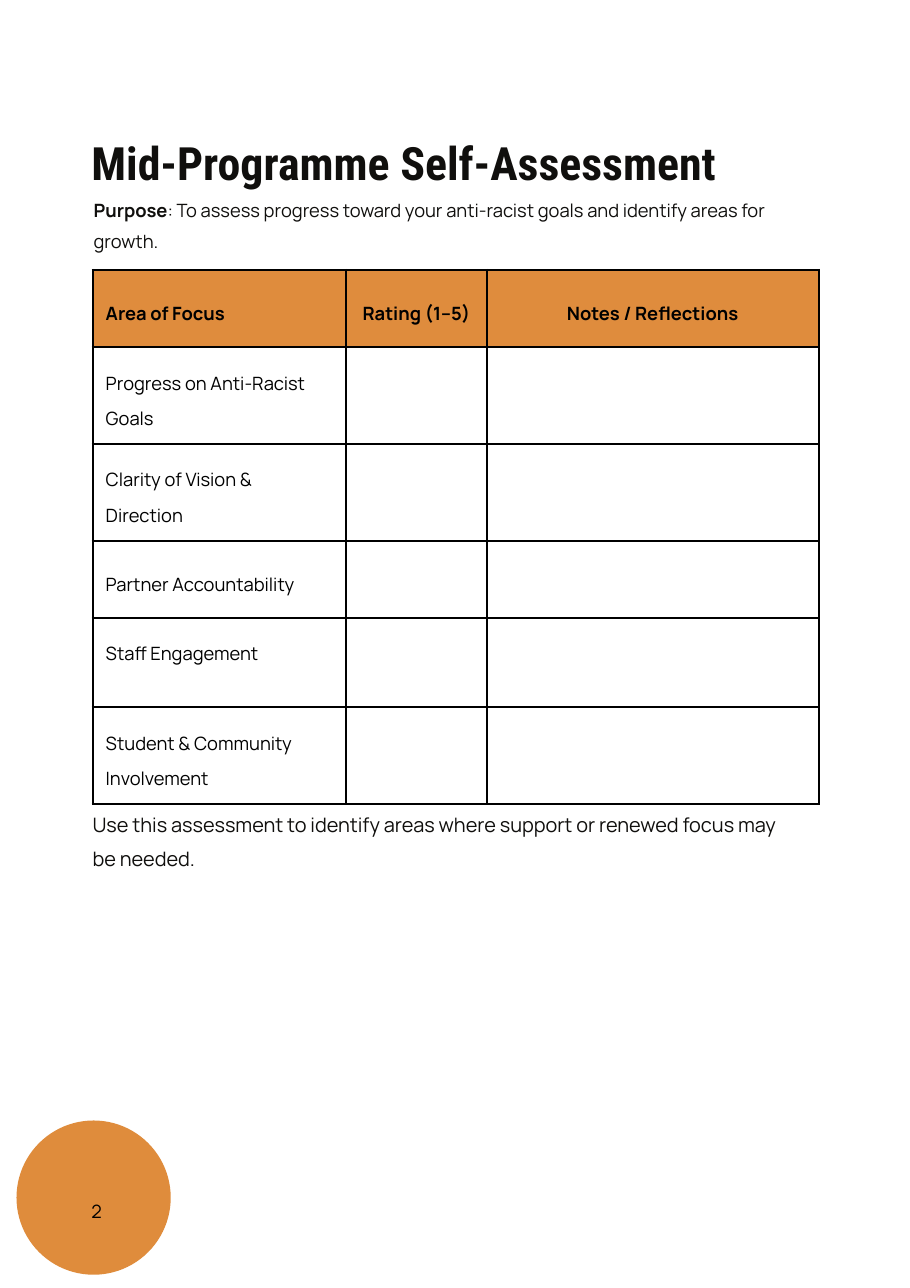
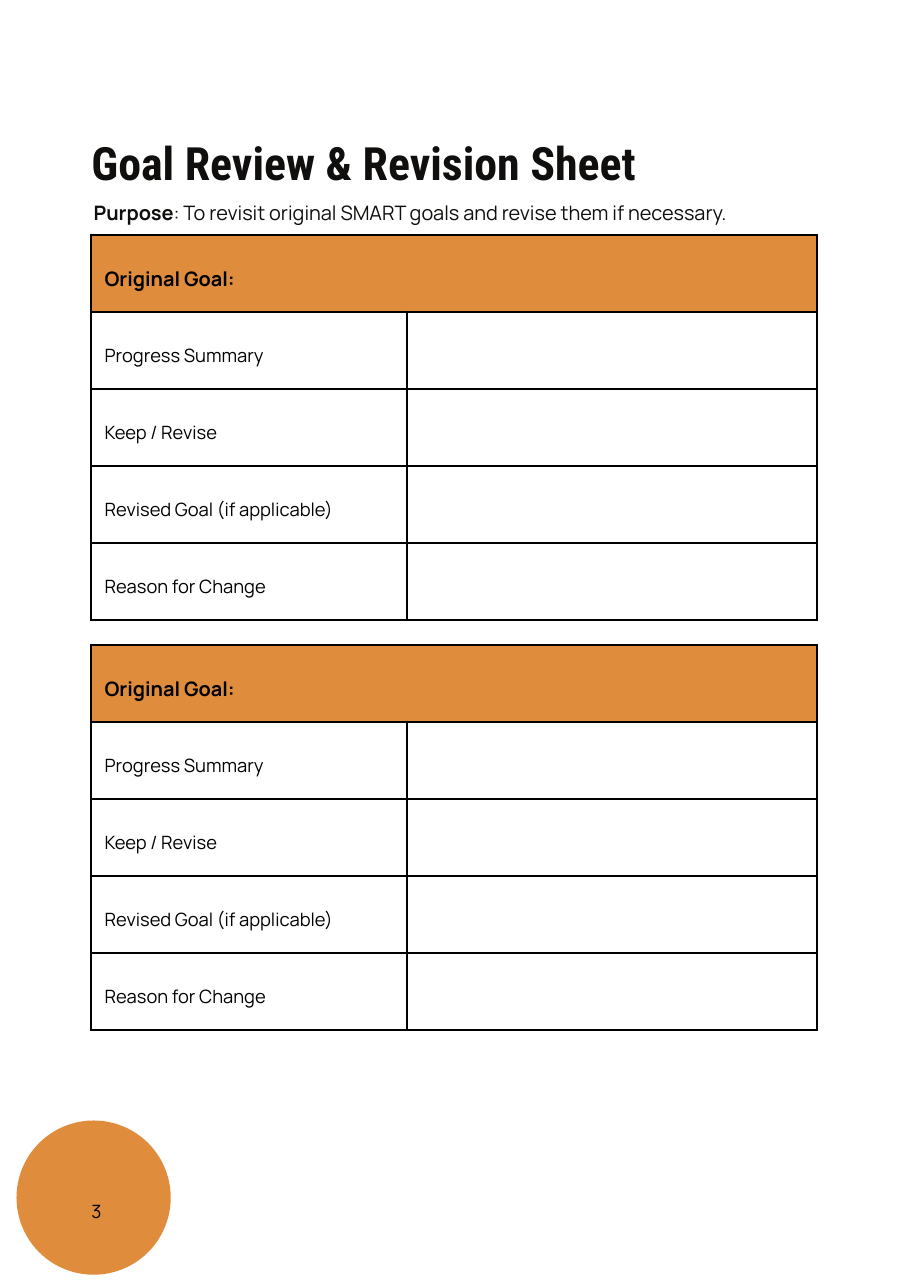
from lxml.etree import SubElement as Sub
from pptx import Presentation
from pptx.dml.color import RGBColor as Rgb
from pptx.enum.shapes import MSO_SHAPE as Shape
from pptx.enum.text import MSO_ANCHOR as Anchor, MSO_AUTO_SIZE as Auto, PP_ALIGN as Align
from pptx.oxml.ns import qn
from pptx.util import Inches, Pt

HUES = {"ink": "100F0D", "black": "000000", "head": "DF8C3D", "disc": "DF8C3C"}
BODY, HEAD = "Manrope", "Roboto Condensed"
LEFT, WIDE = 0.83, 6.42
SIDES = ("a:lnL", "a:lnR", "a:lnT", "a:lnB")
GOAL = ["Progress Summary", "Keep / Revise", "Revised Goal (if applicable)", "Reason for Change"]


def hue(name):
    return Rgb.from_string(HUES[name])


def style(run, size, bold=False, tone="ink", face=BODY):
    font = run.font
    font.name, font.size, font.bold = face, Pt(size), bold
    font.color.rgb = hue(tone)


def bare(frame):
    frame.word_wrap = True
    frame.auto_size = Auto.NONE
    frame.vertical_anchor = Anchor.TOP
    frame.margin_left = frame.margin_right = frame.margin_top = frame.margin_bottom = 0


def note(slide, box, parts, size, tone="ink"):
    frame = slide.shapes.add_textbox(*map(Inches, box)).text_frame
    bare(frame)
    para = frame.paragraphs[0]
    para.line_spacing = 1.4
    for text, bold in parts:
        run = para.add_run()
        run.text = text
        style(run, size, bold, tone)


def border(cell):
    props = cell._tc.get_or_add_tcPr()
    for side in SIDES:
        line = Sub(props, qn(side), w=str(Pt(1.5)))
        fill = Sub(line, qn("a:solidFill"))
        Sub(fill, qn("a:srgbClr"), val=HUES["black"])


def label(cell, text, size, bold, align):
    cell.text_frame.text = text
    para = cell.text_frame.paragraphs[0]
    para.line_spacing = 1.4
    para.alignment = align
    for run in para.runs:
        style(run, size, bold, "black")


def grid(slide, left, top, cols, rows, heads, names, size):
    box = (left, top, sum(cols), sum(rows))
    table = slide.shapes.add_table(len(rows), len(cols), *map(Inches, box)).table
    table.first_row = table.horz_banding = False
    for col, wide in zip(table.columns, cols):
        col.width = Inches(wide)
    for row, tall in zip(table.rows, rows):
        row.height = Inches(tall)
    for r, row in enumerate(table.rows):
        for cell in row.cells:
            cell.margin_left = cell.margin_right = Inches(0.12)
            cell.margin_top = cell.margin_bottom = Inches(0.12)
            cell.vertical_anchor = Anchor.MIDDLE
            border(cell)
            if r:
                cell.fill.background()
            else:
                cell.fill.solid()
                cell.fill.fore_color.rgb = hue("head")
    for c, text in enumerate(heads):
        label(table.cell(0, c), text, size, True, Align.CENTER if c else Align.LEFT)
    for r, text in enumerate(names, 1):
        label(table.cell(r, 0), text, 12, False, Align.LEFT)
    return table


def badge(slide, left, top, number):
    disc = slide.shapes.add_shape(Shape.OVAL, *map(Inches, (left, top, 1.4, 1.4)))
    disc.shadow.inherit = False
    disc.fill.solid()
    disc.fill.fore_color.rgb = hue("disc")
    disc.line.fill.background()
    note(slide, (left + 0.68, top + 0.64, 1.4, 0.25), [(number, False)], 12, "black")


def page(deck, title, aim, size, number):
    slide = deck.slides.add_slide(deck.slide_layouts[5])
    head = slide.shapes.title
    head.left, head.top, head.width, head.height = map(Inches, (LEFT, 1.22, WIDE, 0.45))
    bare(head.text_frame)
    head.text_frame.text = title
    para = head.text_frame.paragraphs[0]
    para.alignment = Align.LEFT
    style(para.runs[0], 30, True, face=HEAD)
    note(slide, (0.85, 1.73, WIDE, 0.48), [("Purpose", True), (": " + aim, False)], size)
    badge(slide, 0.15, 10.17, number)
    return slide


def assess(deck):
    slide = page(deck, "Mid-Programme Self-Assessment",
                 "To assess progress toward your anti-racist goals and identify areas for growth.",
                 12, "2")
    heads = ["Area of Focus", "Rating (1–5)", "Notes / Reflections"]
    names = ["Progress on Anti-Racist Goals", "Clarity of Vision & Direction",
             "Partner Accountability", "Staff Engagement", "Student & Community Involvement"]
    rows = [0.7, 0.8, 0.8, 0.7, 0.81, 0.81]
    table = grid(slide, 0.84, 2.45, [2.3, 1.28, 3.01], rows, heads, names, 12)
    table.cell(4, 0).vertical_anchor = Anchor.TOP
    note(slide, (0.84, 7.29, WIDE, 0.53),
         [("Use this assessment to identify areas where support or renewed focus may be needed.",
           False)], 13)


def review(deck):
    slide = page(deck, "Goal Review & Revision Sheet",
                 "To revisit original SMART goals and revise them if necessary.", 13, "3")
    for top in (2.13, 5.85):
        table = grid(slide, LEFT, top, [2.86, 3.73], [0.7] * 5, ["Original Goal:"], GOAL, 13)
        table.cell(0, 0).merge(table.cell(0, 1))


def main():
    deck = Presentation()
    deck.slide_width, deck.slide_height = Inches(8.26), Inches(11.69)
    assess(deck)
    review(deck)
    deck.save("out.pptx")


if __name__ == "__main__":
    main()
